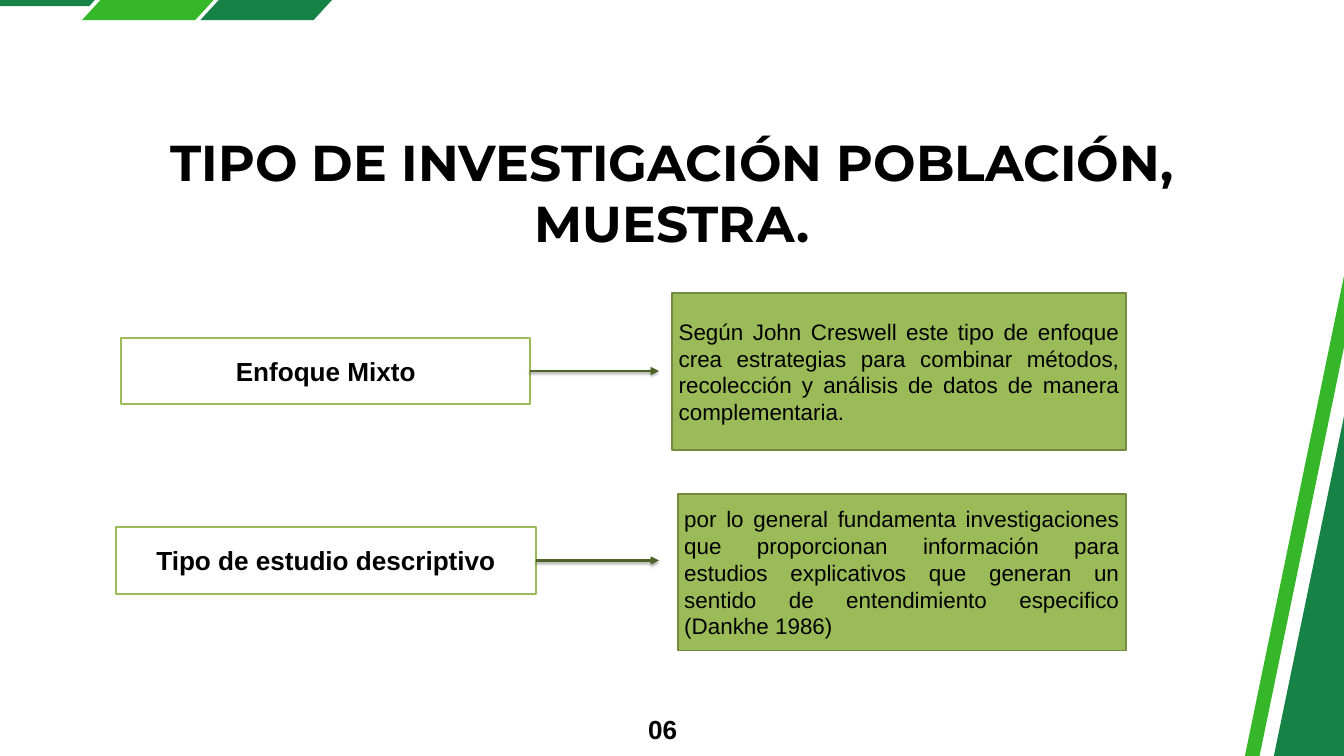
from lxml import etree
from pptx import Presentation, util as u
from pptx.dml.color import RGBColor
from pptx.enum import shapes, text
from pptx.oxml import parse_xml
from pptx.oxml.ns import nsdecls, qn

Pt = u.Pt
ALIGN = text.PP_ALIGN
DARK, BRIGHT = "168246", "35B729"
OLIVE, OLIVE_EDGE, ARROW = "9BBB59", "738A42", "4F6228"


def color(value):
    return RGBColor.from_string(value)


def write(tf, words, size, align, font="Arial", bold=False):
    tf.word_wrap = True
    tf.text = words
    p = tf.paragraphs[0]
    p.alignment = align
    f = p.runs[0].font
    f.name, f.size, f.bold = font, Pt(size), bold
    f.color.rgb = color("000000")
    return p


def add_label(s, box, words, size, align, **style):
    """Text box without margins."""
    tf = s.shapes.add_textbox(*map(Pt, box)).text_frame
    tf.margin_left = tf.margin_top = tf.margin_right = tf.margin_bottom = 0
    return write(tf, words, size, align, **style)


def add_band(s, corner, along, across, fill):
    """Parallelogram spanned by two edge vectors from one corner."""
    x, y = corner
    (ax, ay), (bx, by) = along, across
    points = [(x + ax, y + ay), (x + ax + bx, y + ay + by), (x + bx, y + by)]
    builder = s.shapes.build_freeform(Pt(x), Pt(y))
    builder.add_line_segments([(Pt(px), Pt(py)) for px, py in points])
    sp = builder.convert_to_shape()
    sp.shadow.inherit = False
    sp.fill.solid()
    sp.fill.fore_color.rgb = color(fill)
    sp.line.fill.background()


def add_decoration(s, width):
    # Slanted tabs along the top edge
    add_band(s, (-189.4, 6.5), (60.5, -66.2), (285.1, 0), DARK)
    for left, fill in ((87.8, BRIGHT), (214.6, DARK)):
        add_band(s, (left, 21.6), (88, -95.8), (121.3, 0), fill)
    # Leaning stripes on the right edge
    for inset, across, fill in ((134.6, (328.3, 68.4), DARK),
                                (165.6, (15.1, 3), BRIGHT)):
        add_band(s, (width - inset, 1098), (239, -1157.8), across, fill)


def add_box(s, box, words, size, align, fill, edge, bold=False):
    sp = s.shapes.add_shape(shapes.MSO_SHAPE.RECTANGLE, *map(Pt, box))
    sp.shadow.inherit = False
    sp.fill.solid()
    sp.fill.fore_color.rgb = color(fill)
    sp.line.color.rgb = color(edge)
    sp.line.width = Pt(2)
    sp.text_frame.vertical_anchor = text.MSO_ANCHOR.MIDDLE
    write(sp.text_frame, words, size, align, bold=bold)


def add_arrow(s, start, end, y):
    line = s.shapes.add_connector(shapes.MSO_CONNECTOR.STRAIGHT,
                                  Pt(start), Pt(y), Pt(end), Pt(y))
    line.line.color.rgb = color(ARROW)
    line.line.width = Pt(3)
    # Arrowhead and soft shadow
    etree.SubElement(line.line._get_or_add_ln(), qn("a:tailEnd"), type="triangle")
    line._element.spPr.append(parse_xml(
        f'<a:effectLst {nsdecls("a")}>'
        f'<a:outerShdw blurRad="{Pt(3.1)}" dist="{Pt(1.8)}" dir="5400000" rotWithShape="0">'
        '<a:srgbClr val="000000"><a:alpha val="35000"/></a:srgbClr>'
        '</a:outerShdw></a:effectLst>'))


def add_concept(s, term_box, term, detail_box, detail):
    """Term on the left, arrow, explanation on the right."""
    left, top, width, height = term_box
    add_box(s, term_box, term, 28, ALIGN.CENTER, "FFFFFF", OLIVE, bold=True)
    add_box(s, detail_box, detail, 24, ALIGN.JUSTIFY, OLIVE, OLIVE_EDGE)
    add_arrow(s, left + width, 706, top + height / 2)


def main():
    width, height = 1440, 810
    prs = Presentation()
    prs.slide_width, prs.slide_height = Pt(width), Pt(height)
    s = prs.slides.add_slide(prs.slide_layouts[6])

    add_decoration(s, width)

    # Title and page number
    add_label(s, (174, 141, 1092, 131), "TIPO DE INVESTIGACIÓN POBLACIÓN, MUESTRA.",
              54, ALIGN.CENTER, font="Montserrat", bold=True)
    p = add_label(s, (685.5, 759, 40, 40), "06", 28, ALIGN.RIGHT, bold=True)
    p.line_spacing = Pt(39.2)

    # Concepts
    add_concept(s, (130, 362, 438, 71), "Enfoque Mixto", (720, 314, 486, 168),
                "Según John Creswell este tipo de enfoque crea estrategias para "
                "combinar métodos, recolección y análisis de datos de manera "
                "complementaria.")
    add_concept(s, (124, 564.5, 450, 72), "Tipo de estudio descriptivo",
                (726, 529, 480, 168),
                "por lo general fundamenta investigaciones que proporcionan "
                "información para estudios explicativos que generan un sentido de "
                "entendimiento especifico (Dankhe 1986)")

    prs.save("out.pptx")


if __name__ == "__main__":
    main()
